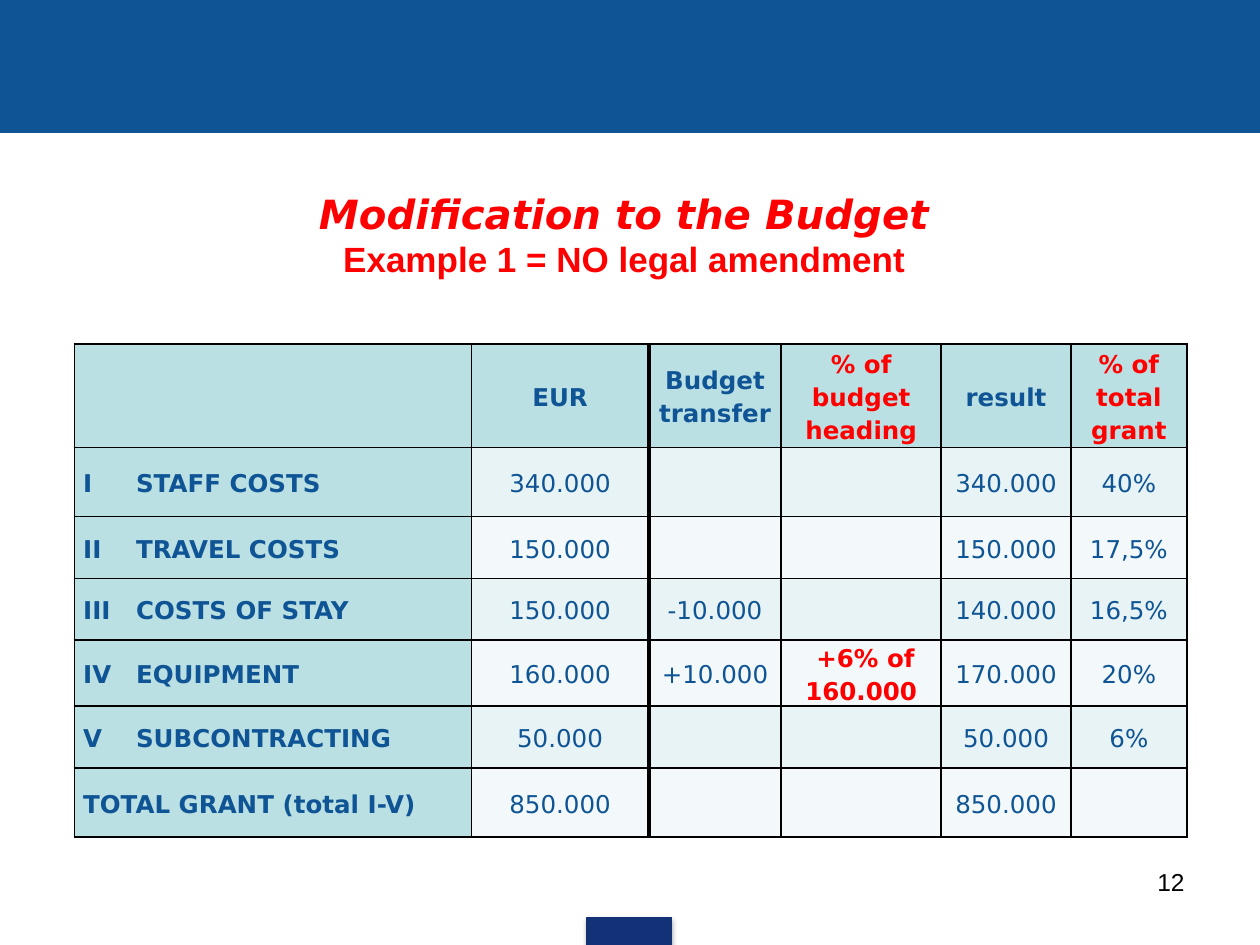
from typing import NamedTuple

from lxml import etree
from pptx import Presentation
from pptx.dml import color
from pptx.enum import shapes, text
from pptx.oxml import ns, parse_xml
from pptx.util import Inches, Pt

BLUE, NAVY, RED, BLACK = "0F5494", "133176", "FF0000", "000000"
HEADING_FILL, ODD_FILL, EVEN_FILL = "BBE0E3", "E7F3F4", "F3F9FA"
COLUMN_WIDTHS = [3.15, 1.41, 1.05, 1.27, 1.03, 0.92]
ROW_HEIGHTS = [0.82, 0.55, 0.49, 0.49, 0.49, 0.49, 0.55]
BUDGET = [
    ["", "EUR", "Budget transfer", "% of budget heading", "result", "% of total grant"],
    ["I\tSTAFF COSTS", "340.000", "", "", "340.000", "40%"],
    ["II\tTRAVEL COSTS", "150.000", "", "", "150.000", "17,5%"],
    ["III\tCOSTS OF STAY", "150.000", "-10.000", "", "140.000", "16,5%"],
    ["IV\tEQUIPMENT", "160.000", "+10.000", "\u00a0+6% of 160.000".replace("\u00a0", " "), "170.000", "20%"],
    ["V\tSUBCONTRACTING", "50.000", "", "", "50.000", "6%"],
    ["TOTAL GRANT (total I-V)", "850.000", "", "", "850.000", ""],
]
RED_CELLS = {(0, 3), (0, 5), (4, 3)}


class Band(NamedTuple):
    """A filled rectangle of the page frame."""
    left: float
    top: float
    width: float
    height: float
    fill: str
    shadow: bool


class Style(NamedTuple):
    """The look of one piece of text."""
    name: str
    size: int
    fill: str
    bold: bool = False
    italic: bool = False


BANDS = [Band(0, 0, 10, 1.05, BLUE, False), Band(4.66, 7.28, 0.67, 0.22, NAVY, True)]


def rgb(value: str) -> color.RGBColor:
    """Return the colour of a hex string."""
    return color.RGBColor.from_string(value)


def format_paragraph(paragraph, style: Style, alignment) -> None:
    """Align a paragraph and style its runs."""
    paragraph.alignment = alignment
    for run in paragraph.runs:
        font = run.font
        font.name, font.size = style.name, Pt(style.size)
        font.bold, font.italic = style.bold, style.italic
        font.color.rgb = rgb(style.fill)


def add_band(slide, band: Band) -> None:
    """Draw one rectangle, with a soft shadow if asked."""
    shape = slide.shapes.add_shape(shapes.MSO_SHAPE.RECTANGLE, *map(Inches, band[:4]))
    shape.shadow.inherit = False
    shape.fill.solid()
    shape.fill.fore_color.rgb = rgb(band.fill)
    shape.line.color.rgb = rgb(band.fill)
    shape.line.width = Pt(0.75)
    if band.shadow:
        effects = shape._element.spPr.find(ns.qn("a:effectLst"))
        effects.append(parse_xml(
            f'<a:outerShdw {ns.nsdecls("a")} blurRad="{Pt(3.1)}" dist="{Pt(1.8)}" dir="5400000" '
            f'rotWithShape="0"><a:srgbClr val="{BLACK}"><a:alpha val="35000"/></a:srgbClr></a:outerShdw>'))


def set_borders(cell, column: int) -> None:
    """Rule a cell, with a heavy line between the second and third columns."""
    properties = cell._tc.get_or_add_tcPr()
    heavy = {1: "R", 2: "L"}.get(column)
    for side in "LRTB":
        width = Pt(3 if side == heavy else 1)
        properties.append(parse_xml(
            f'<a:ln{side} {ns.nsdecls("a")} w="{width}"><a:solidFill><a:srgbClr val="{BLACK}"/>'
            f'</a:solidFill></a:ln{side}>'))


def add_tab_stop(paragraph, position: float) -> None:
    """Add a left tab stop to a paragraph."""
    tabs = etree.SubElement(paragraph._p.get_or_add_pPr(), ns.qn("a:tabLst"))
    etree.SubElement(tabs, ns.qn("a:tab"), pos=str(Inches(position)), algn="l")


def fill_cell(cell, row: int, column: int, words: str) -> None:
    """Write and format one budget cell."""
    heading = row == 0 or column == 0
    set_borders(cell, column)
    cell.fill.solid()
    cell.fill.fore_color.rgb = rgb(HEADING_FILL if heading else ODD_FILL if row % 2 else EVEN_FILL)
    cell.margin_left = cell.margin_right = Inches(0.07)
    cell.margin_top = cell.margin_bottom = 0
    cell.vertical_anchor = text.MSO_ANCHOR.MIDDLE
    cell.text_frame.text = words
    paragraph = cell.text_frame.paragraphs[0]
    paragraph.line_spacing = 1.15
    if "\t" in words:
        add_tab_stop(paragraph, 0.42)
    red = (row, column) in RED_CELLS
    style = Style("DejaVu Sans", 14, RED if red else BLUE, heading or red)
    format_paragraph(paragraph, style, text.PP_ALIGN.CENTER if column else text.PP_ALIGN.LEFT)


def add_budget(slide) -> None:
    """Add the budget table."""
    frame = slide.shapes.add_table(
        len(ROW_HEIGHTS), len(COLUMN_WIDTHS), Inches(0.59), Inches(2.73),
        Inches(sum(COLUMN_WIDTHS)), Inches(sum(ROW_HEIGHTS)))
    table = frame.table
    table.first_row = table.horz_banding = False
    for column, width in zip(table.columns, COLUMN_WIDTHS):
        column.width = Inches(width)
    for row, height in zip(table.rows, ROW_HEIGHTS):
        row.height = Inches(height)
    for row, entries in enumerate(BUDGET):
        for column, words in enumerate(entries):
            fill_cell(table.cell(row, column), row, column, words)


def set_title(slide) -> None:
    """Place and format the two-line title."""
    title = slide.shapes.title
    title.left, title.top, title.width, title.height = map(Inches, (1.02, 1.45, 7.87, 0.82))
    frame = title.text_frame
    frame.text = "Modification to the Budget\nExample 1 = NO legal amendment"
    frame.auto_size = text.MSO_AUTO_SIZE.NONE
    frame.vertical_anchor = text.MSO_ANCHOR.MIDDLE
    styles = [Style("DejaVu Sans", 23, RED, True, True), Style("Arial", 20, RED, True)]
    for paragraph, style in zip(frame.paragraphs, styles):
        format_paragraph(paragraph, style, text.PP_ALIGN.CENTER)


def add_page_number(slide) -> None:
    """Add the page number at the lower right."""
    box = slide.shapes.add_textbox(*map(Inches, (7.17, 6.83, 2.33, 0.52)))
    box.text_frame.word_wrap = True
    box.text_frame.text = "12"
    format_paragraph(box.text_frame.paragraphs[0], Style("Arial", 14, BLACK), text.PP_ALIGN.RIGHT)


def main() -> None:
    """Build and save the slide."""
    presentation = Presentation()
    presentation.slide_width, presentation.slide_height = Inches(10), Inches(7.5)
    slide = presentation.slides.add_slide(presentation.slide_layouts[5])
    for band in BANDS:
        add_band(slide, band)
    set_title(slide)
    add_budget(slide)
    add_page_number(slide)
    presentation.save("out.pptx")


if __name__ == "__main__":
    main()
